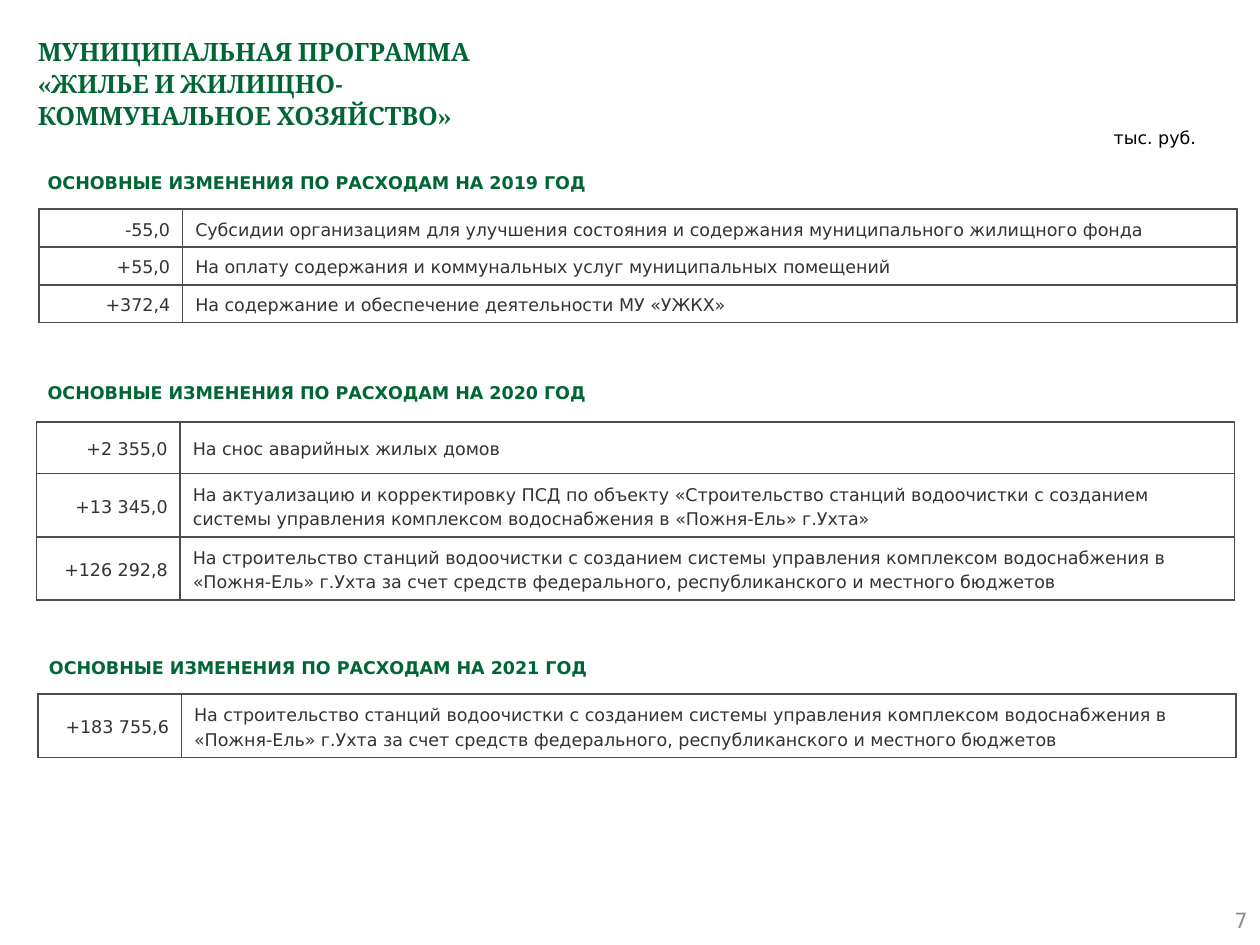
from lxml import etree
from pptx import Presentation
from pptx.dml.color import RGBColor
from pptx.enum.shapes import MSO_SHAPE as Shape
from pptx.enum.text import MSO_ANCHOR as Anchor, MSO_AUTO_SIZE as AutoSize, PP_ALIGN as Align
from pptx.oxml.ns import qn
from pptx.util import Inches, Pt

COLORS = {"green": "006633", "text": "333333", "border": "4D4D4D",
          "black": "000000", "page": "8C8C8C"}
COLUMN_WIDTHS = (1.14, 8.37)
HEADING = "ОСНОВНЫЕ ИЗМЕНЕНИЯ ПО РАСХОДАМ НА {} ГОД"
PLANT = ("На строительство станций водоочистки с созданием системы управления комплексом "
         "водоснабжения в «Пожня-Ель» г.Ухта за счет средств федерального, "
         "республиканского и местного бюджетов")

# year, heading position, table position, rows of (height, amount, purpose)
SECTIONS = [
    (2019, (0.28, 1.23), (0.31, 1.66), [
        (0.3, "-55,0", "Субсидии организациям для улучшения состояния и содержания "
                       "муниципального жилищного фонда"),
        (0.3, "+55,0", "На оплату содержания и коммунальных услуг муниципальных помещений"),
        (0.29, "+372,4", "На содержание и обеспечение деятельности МУ «УЖКХ»")]),
    (2020, (0.28, 2.9), (0.29, 3.35), [
        (0.41, "+2 355,0", "На снос аварийных жилых домов"),
        (0.5, "+13 345,0", "На актуализацию и корректировку ПСД по объекту «Строительство "
                           "станций водоочистки с созданием системы управления комплексом "
                           "водоснабжения в «Пожня-Ель» г.Ухта»"),
        (0.5, "+126 292,8", PLANT)]),
    (2021, (0.29, 5.08), (0.3, 5.51), [(0.5, "+183 755,6", PLANT)]),
]


class BudgetSlide:
    """Holds the text style and the slide being filled."""
    font = "DejaVu Sans"
    size = 10

    def __init__(self, deck):
        self.slide = deck.slides.add_slide(deck.slide_layouts.get_by_name("Title Only"))

    def add_text(self, frame, lines, color, size=None, font=None, bold=False,
                 align=Align.LEFT, spacing=1.0, anchor=Anchor.TOP):
        frame.word_wrap = True
        frame.vertical_anchor = anchor
        paragraph = frame.paragraphs[0]
        paragraph.alignment = align
        paragraph.line_spacing = spacing
        for index, line in enumerate(lines):
            if index:
                paragraph.add_line_break()
            run = paragraph.add_run()
            run.text = line
            run.font.name = font or self.font
            run.font.size = Pt(size or self.size)
            run.font.bold = bold
            run.font.color.rgb = RGBColor.from_string(COLORS[color])

    def title(self, lines):
        title = self.slide.shapes.title
        title.left, title.top = Inches(0.2), Inches(0.2)
        title.width, title.height = Inches(9.61), Inches(0.79)
        title.text_frame.auto_size = AutoSize.NONE
        title.text_frame.margin_top = Inches(0.08)
        self.add_text(title.text_frame, lines, "green", size=14.4, font="Cambria",
                      bold=True, spacing=1.05)

    def label(self, text, left, top, width, height, color, **style):
        box = self.slide.shapes.add_textbox(*map(Inches, (left, top, width, height)))
        self.add_text(box.text_frame, [text], color, **style)

    def heading(self, text, left, top):
        plate = self.slide.shapes.add_shape(
            Shape.PENTAGON, *map(Inches, (left, top, 5.32, 0.43)))
        plate.adjustments[0] = 0
        plate.shadow.inherit = False
        plate.fill.background()
        plate.line.fill.background()
        self.add_text(plate.text_frame, [text], "green", bold=True, anchor=Anchor.MIDDLE)

    def table(self, left, top, rows):
        height = sum(row[0] for row in rows)
        table = self.slide.shapes.add_table(
            len(rows), len(COLUMN_WIDTHS),
            *map(Inches, (left, top, sum(COLUMN_WIDTHS), height))).table
        table.first_row = table.horz_banding = False
        for column, width in zip(table.columns, COLUMN_WIDTHS):
            column.width = Inches(width)
        for row, (row_height, *texts) in zip(table.rows, rows):
            row.height = Inches(row_height)
            for cell, text, align in zip(row.cells, texts, (Align.RIGHT, Align.LEFT)):
                self.add_text(cell.text_frame, [text], "text", align=align, spacing=1.2)
                cell.vertical_anchor = Anchor.MIDDLE
                self.border(cell)
                cell.fill.background()

    def border(self, cell):
        properties = cell._tc.get_or_add_tcPr()
        for side in ("a:lnL", "a:lnR", "a:lnT", "a:lnB"):
            line = etree.SubElement(properties, qn(side), w=str(Pt(1)))
            fill = etree.SubElement(line, qn("a:solidFill"))
            etree.SubElement(fill, qn("a:srgbClr"), val=COLORS["border"])


def main():
    deck = Presentation()
    deck.slide_width, deck.slide_height = Inches(10), Inches(7.5)
    page = BudgetSlide(deck)
    page.title(["МУНИЦИПАЛЬНАЯ ПРОГРАММА ", "«ЖИЛЬЕ И ЖИЛИЩНО-", "КОММУНАЛЬНОЕ ХОЗЯЙСТВО»"])
    page.label("7", 7.67, 7.1, 2.33, 0.4, "page", size=12, align=Align.RIGHT,
               anchor=Anchor.MIDDLE)
    page.label("тыс. руб.", 8.74, 0.93, 1.01, 0.3, "black", spacing=1.2)
    for year, heading_at, table_at, rows in SECTIONS:
        page.heading(HEADING.format(year), *heading_at)
        page.table(*table_at, rows)
    deck.save("out.pptx")


if __name__ == "__main__":
    main()
